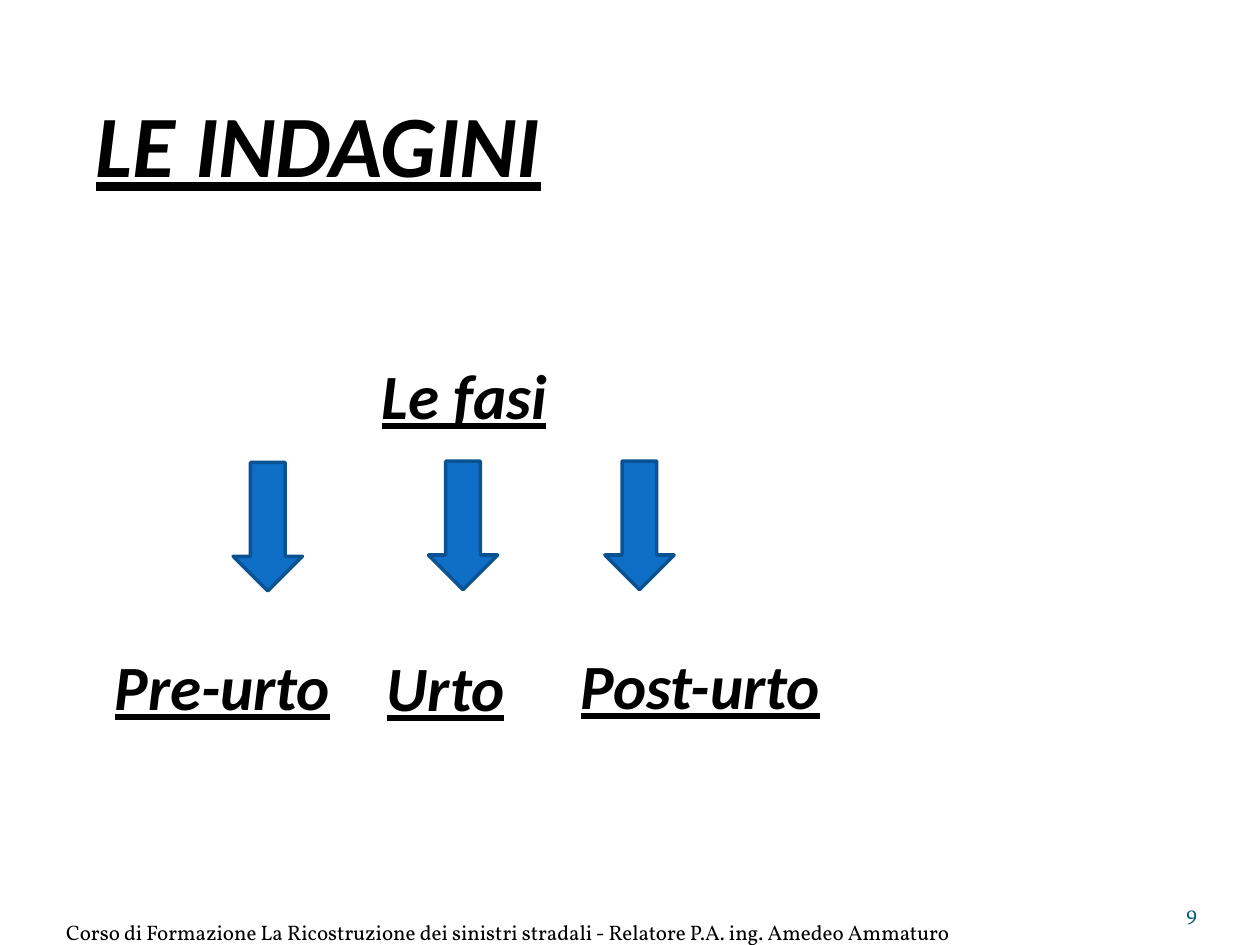
from dataclasses import dataclass

import pptx
import pptx.dml.color
import pptx.enum.shapes
import pptx.enum.text
import pptx.util

Pt = pptx.util.Pt
ALIGN = pptx.enum.text.PP_ALIGN
COLOURS = {"text": "000000", "number": "045D75", "arrow": "0F6FC6", "outline": "0B5292"}
HEADING = {"name": "Calibri", "bold": True, "italic": True, "underline": True}
FOOTER = {"name": "Vollkorn", "size": Pt(12)}
PHASE_HEIGHT = 73.44


@dataclass
class Label:
    text: str
    left: float
    top: float
    width: float
    height: float
    font: dict
    colour: str = "text"
    align: ALIGN = ALIGN.LEFT
    inset_top: float = 3.6


@dataclass
class Arrow:
    left: float
    top: float
    width: float = 39.6
    height: float = PHASE_HEIGHT


def rgb(colour: str) -> pptx.dml.color.RGBColor:
    return pptx.dml.color.RGBColor.from_string(COLOURS[colour])


def phase(text: str, left: float, top: float, width: float) -> Label:
    return Label(text, left, top, width, PHASE_HEIGHT, {**HEADING, "size": Pt(36)})


def draw_label(slide, label: Label) -> None:
    box = slide.shapes.add_textbox(
        Pt(label.left), Pt(label.top), Pt(label.width), Pt(label.height))
    frame_format = {
        "word_wrap": True,
        "vertical_anchor": pptx.enum.text.MSO_ANCHOR.BOTTOM,
        "margin_left": Pt(0),
        "margin_top": Pt(label.inset_top),
        "margin_right": Pt(0),
        "margin_bottom": Pt(0),
    }
    for name, value in frame_format.items():
        setattr(box.text_frame, name, value)
    paragraph = box.text_frame.paragraphs[0]
    paragraph.alignment = label.align
    run = paragraph.add_run()
    run.text = label.text
    for name, value in label.font.items():
        setattr(run.font, name, value)
    run.font.color.rgb = rgb(label.colour)


def draw_arrow(slide, arrow: Arrow) -> None:
    shape = slide.shapes.add_shape(
        pptx.enum.shapes.MSO_SHAPE.DOWN_ARROW,
        Pt(arrow.left), Pt(arrow.top), Pt(arrow.width), Pt(arrow.height))
    shape.shadow.inherit = False
    shape.fill.solid()
    shape.fill.fore_color.rgb = rgb("arrow")
    shape.line.color.rgb = rgb("outline")
    shape.line.width = Pt(2)


LABELS = [
    Label("9", 624.24, 500.4, 59.76, 28.8, FOOTER, "number", ALIGN.RIGHT, 0),
    Label("Corso di Formazione La Ricostruzione dei sinistri stradali - "
          "Relatore P.A. ing. Amedeo Ammaturo",
          0, 511.2, 581.04, 28.8, FOOTER, align=ALIGN.CENTER, inset_top=0),
    Label("LE INDAGINI", 54.72, 21.6, 648, 90, {**HEADING, "size": Pt(50)}),
    phase("Le fasi", 218.16, 173.52, 294.48),
    phase("Pre-urto", 65.52, 339.84, 158.4),
    phase("Urto", 221.04, 340.56, 105.12),
    phase("Post-urto", 331.92, 339.12, 169.92),
]
ARROWS = [Arrow(133.2, 264.24), Arrow(244.8, 263.52), Arrow(345.6, 263.52)]


def main() -> None:
    presentation = pptx.Presentation()
    presentation.slide_width = Pt(720)
    presentation.slide_height = Pt(540)
    slide = presentation.slides.add_slide(presentation.slide_layouts[6])
    for label in LABELS:
        draw_label(slide, label)
    for arrow in ARROWS:
        draw_arrow(slide, arrow)
    presentation.save("out.pptx")


if __name__ == "__main__":
    main()
